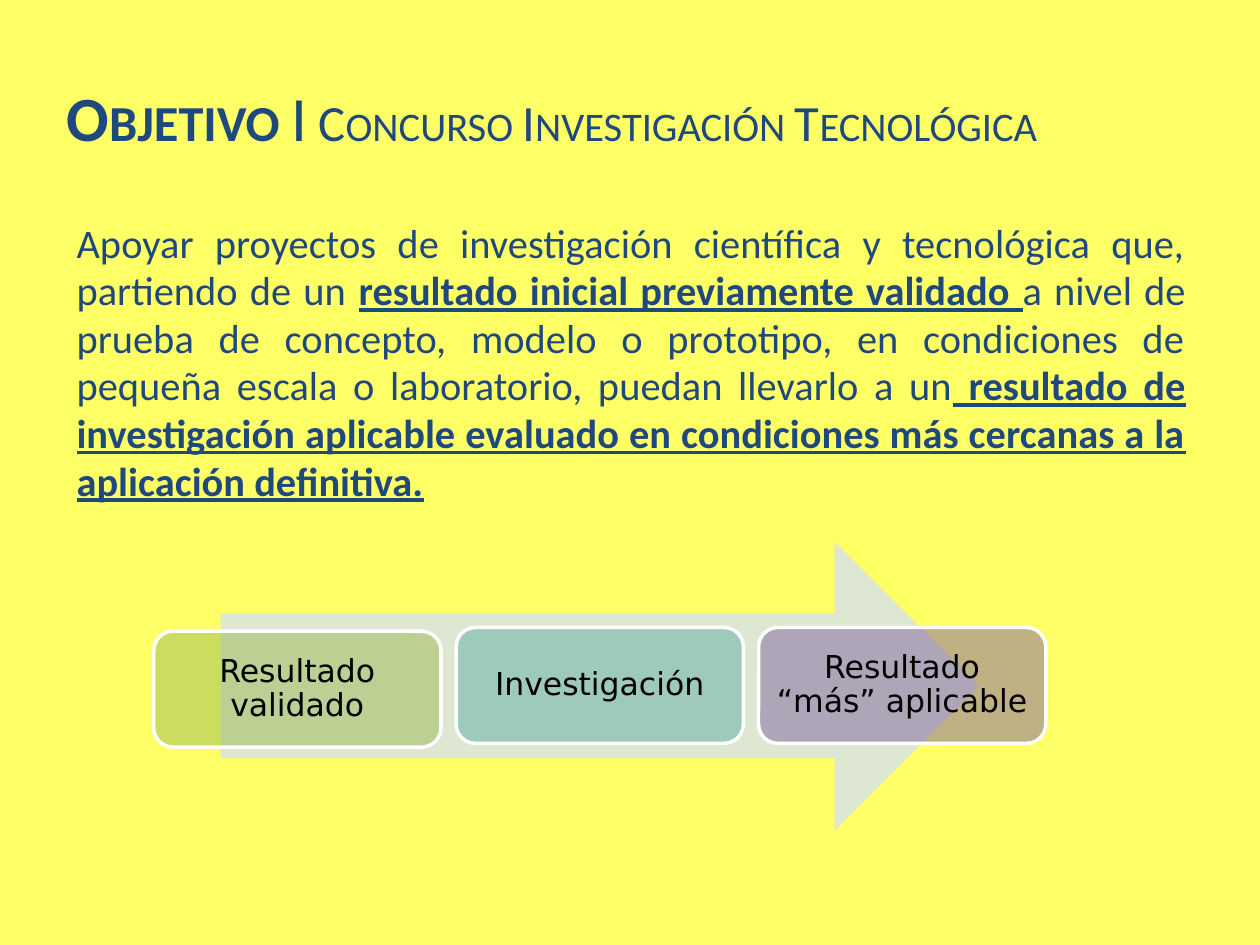
from lxml.etree import SubElement
from pptx import Presentation
from pptx.dml.color import RGBColor as RGB
from pptx.enum.shapes import MSO_SHAPE as SHAPE
from pptx.enum.text import MSO_ANCHOR as ANCHOR, PP_ALIGN as ALIGN
from pptx.oxml.ns import qn
from pptx.util import Inches, Pt

THEME = {
    "background": RGB.from_string("FFFF66"),
    "arrow": RGB.from_string("DEE7D1"),
    "outline": RGB.from_string("FFFFFF"),
    "heading": {"name": "Calibri", "size": Pt(36), "color": "1F497D"},
    "subheading": {"name": "Calibri", "size": Pt(29), "color": "1F497D"},
    "body": {"name": "Calibri", "size": Pt(23.1), "color": "1F497D"},
    "step": {"name": "DejaVu Sans", "size": Pt(18), "color": "000000"},
}
STRONG = {"bold": True, "underline": True}

# Content: (text, theme style, extra format)
HEADING = [
    ("Objetivo", "heading", {"bold": True}),
    (" I ", "heading", {}),
    ("Concurso Investigación Tecnológica", "subheading", {}),
]
OBJECTIVE = [
    ("Apoyar proyectos de investigación científica y tecnológica que, "
     "partiendo de un ", "body", {}),
    ("resultado inicial previamente validado ", "body", STRONG),
    ("a nivel de prueba de concepto, modelo o prototipo, en condiciones de "
     "pequeña escala o laboratorio, puedan llevarlo a un", "body", {}),
    (" ", "body", {"underline": True}),
    ("resultado de investigación aplicable evaluado en condiciones más "
     "cercanas a la aplicación definitiva.", "body", STRONG),
]
# Steps: (label, fill, top)
STEPS = [
    ("Resultado validado", "9BBB59", 5.01),
    ("Investigación", "5EAFA6", 4.98),
    ("Resultado “más” aplicable", "8064A2", 4.98),
]
STEP_LEFT, STEP_PITCH, STEP_WIDTH, STEP_HEIGHT = 1.22, 2.4, 2.28, 0.92


def apply(target, values):
    for name, value in values.items():
        setattr(target, name, value)


def place(left, top, width, height):
    return [Inches(n) for n in (left, top, width, height)]


def write(frame, runs, paragraph_format, small_caps=False, **frame_format):
    apply(frame, {"word_wrap": True, **frame_format})
    paragraph = frame.paragraphs[0]
    apply(paragraph, paragraph_format)
    for text, style, extra in runs:
        run = paragraph.add_run()
        run.text = text
        look = {**THEME[style], **extra}
        run.font.color.rgb = RGB.from_string(look.pop("color"))
        apply(run.font, look)
        if small_caps:
            run.font._element.set("cap", "small")


def add_shape(slide, preset, box, color):
    shape = slide.shapes.add_shape(preset, *place(*box))
    shape.shadow.inherit = False
    shape.fill.solid()
    shape.fill.fore_color.rgb = color
    return shape


def add_step(slide, index, label, color, top):
    box = (STEP_LEFT + index * STEP_PITCH, top, STEP_WIDTH, STEP_HEIGHT)
    step = add_shape(slide, SHAPE.ROUNDED_RECTANGLE, box, RGB.from_string(color))
    tint = step._element.spPr.find(qn("a:solidFill")).find(qn("a:srgbClr"))
    SubElement(tint, qn("a:alpha")).set("val", "50000")
    step.line.color.rgb = THEME["outline"]
    step.line.width = Pt(2)
    margins = {f"margin_{side}": Inches(0.07)
               for side in ("left", "top", "right", "bottom")}
    write(step.text_frame, [(label, "step", {})],
          {"alignment": ALIGN.CENTER, "line_spacing": 0.9},
          vertical_anchor=ANCHOR.MIDDLE, **margins)


def main():
    prs = Presentation()
    prs.slide_width, prs.slide_height = Inches(10), Inches(7.5)
    slide = prs.slides.add_slide(prs.slide_layouts[6])
    slide.background.fill.solid()
    slide.background.fill.fore_color.rgb = THEME["background"]

    # Heading and objective
    heading = slide.shapes.add_textbox(*place(0.43, 0.3, 8.24, 1.25))
    write(heading.text_frame, HEADING, {}, small_caps=True,
          vertical_anchor=ANCHOR.MIDDLE)
    objective = slide.shapes.add_textbox(*place(0.51, 1.7, 9, 2.36))
    write(objective.text_frame, OBJECTIVE,
          {"alignment": ALIGN.JUSTIFY, "line_spacing": 0.98})

    # Process arrow with its steps
    arrow = add_shape(slide, SHAPE.RIGHT_ARROW, (1.75, 4.3, 6.02, 2.29),
                      THEME["arrow"])
    arrow.line.fill.background()
    for index, step in enumerate(STEPS):
        add_step(slide, index, *step)

    prs.save("out.pptx")


if __name__ == "__main__":
    main()
